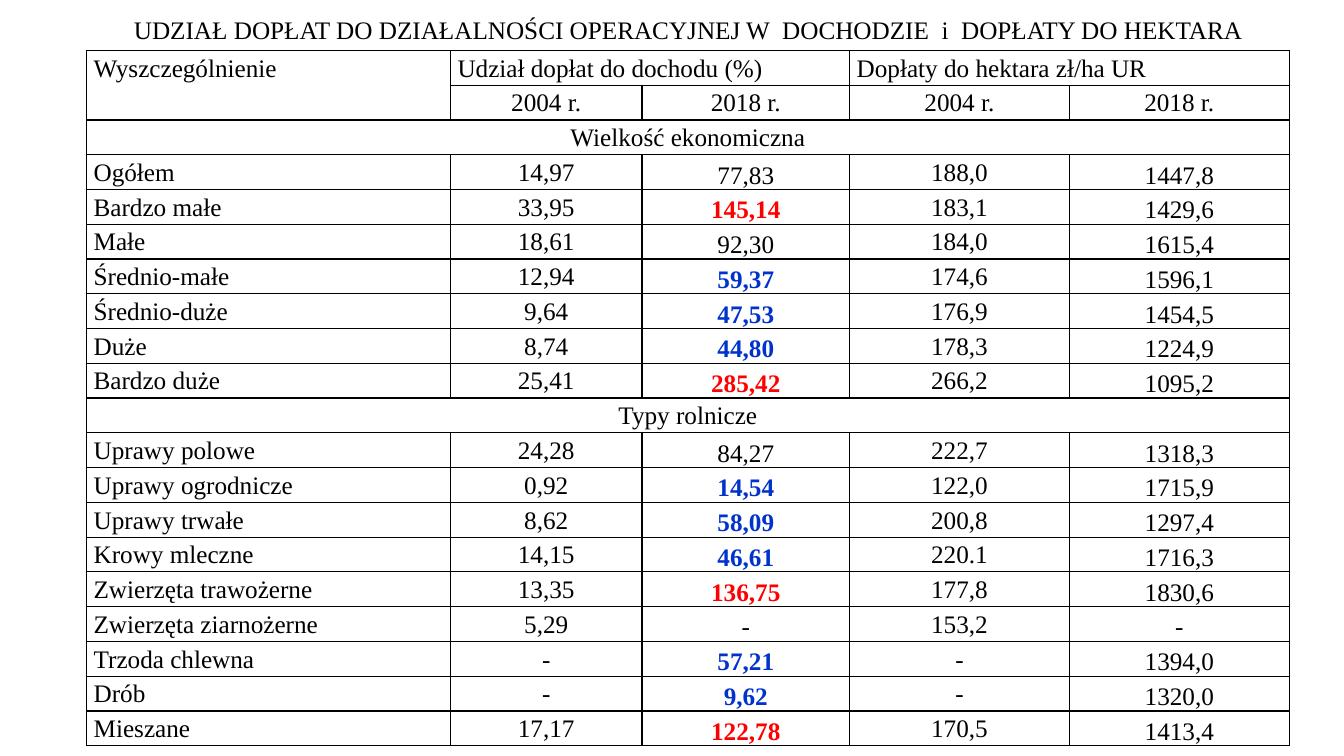
from dataclasses import dataclass
from typing import NamedTuple

from lxml import etree
from pptx import Presentation
from pptx import util as u
from pptx.dml.color import RGBColor
from pptx.enum import text
from pptx.oxml import ns


@dataclass(frozen=True)
class Theme:
    font: str = "Times New Roman"
    size: int = 18
    ink: str = "000000"
    high: str = "FF0000"
    low: str = "0033CC"
    line_spacing: float = 1.15
    space_after: int = 8
    border: int = 1


class Farm(NamedTuple):
    name: str
    share_2004: str
    share_2018: str
    rate_2004: str
    rate_2018: str


class Section(NamedTuple):
    heading: str
    farms: list[Farm]


THEME = Theme()
TITLE = "UDZIAŁ DOPŁAT DO DZIAŁALNOŚCI OPERACYJNEJ W  DOCHODZIE  i  DOPŁATY DO HEKTARA"
COLUMN_WIDTHS = [9.17, 4.83, 5.23, 5.54, 5.54]
TABLE_HEIGHT = 17.53
SHARE_2018_COLUMN = 2
SECTIONS = [
    Section("Wielkość ekonomiczna", [
        Farm("Ogółem", "14,97", "77,83", "188,0", "1447,8"),
        Farm("Bardzo małe", "33,95", "145,14", "183,1", "1429,6"),
        Farm("Małe", "18,61", "92,30", "184,0", "1615,4"),
        Farm("Średnio-małe", "12,94", "59,37", "174,6", "1596,1"),
        Farm("Średnio-duże", "9,64", "47,53", "176,9", "1454,5"),
        Farm("Duże", "8,74", "44,80", "178,3", "1224,9"),
        Farm("Bardzo duże", "25,41", "285,42", "266,2", "1095,2"),
    ]),
    Section("Typy rolnicze", [
        Farm("Uprawy polowe", "24,28", "84,27", "222,7", "1318,3"),
        Farm("Uprawy ogrodnicze", "0,92", "14,54", "122,0", "1715,9"),
        Farm("Uprawy trwałe", "8,62", "58,09", "200,8", "1297,4"),
        Farm("Krowy mleczne", "14,15", "46,61", "220.1", "1716,3"),
        Farm("Zwierzęta trawożerne", "13,35", "136,75", "177,8", "1830,6"),
        Farm("Zwierzęta ziarnożerne", "5,29", "-", "153,2", "-"),
        Farm("Trzoda chlewna", "-", "57,21", "-", "1394,0"),
        Farm("Drób", "-", "9,62", "-", "1320,0"),
        Farm("Mieszane", "17,17", "122,78", "170,5", "1413,4"),
    ]),
]


def write_text(frame, content: str, *, color: str = THEME.ink, bold: bool = False,
               centered: bool = False, line_spacing: float = 1.0,
               space_after: int = 0) -> None:
    paragraph = frame.paragraphs[0]
    paragraph.alignment = text.PP_ALIGN.CENTER if centered else text.PP_ALIGN.LEFT
    paragraph.line_spacing = line_spacing
    paragraph.space_before = u.Pt(0)
    paragraph.space_after = u.Pt(space_after)
    run = paragraph.add_run()
    run.text = content
    run.font.name = THEME.font
    run.font.size = u.Pt(THEME.size)
    run.font.bold = bold
    run.font.color.rgb = RGBColor.from_string(color)


def format_cell(cell) -> None:
    """Clear the fill, set the margins and rule all four sides."""
    cell.fill.background()
    cell.margin_left = cell.margin_right = u.Cm(0.18)
    cell.margin_top = cell.margin_bottom = 0
    properties = cell._tc.get_or_add_tcPr()
    for index, side in enumerate(("lnL", "lnR", "lnT", "lnB")):
        line = etree.Element(ns.qn(f"a:{side}"), w=str(u.Pt(THEME.border)))
        fill = etree.SubElement(line, ns.qn("a:solidFill"))
        etree.SubElement(fill, ns.qn("a:srgbClr"), val=THEME.ink)
        properties.insert(index, line)


def write_cell(cell, content: str, *, centered: bool = True, bottom: bool = False,
               color: str = THEME.ink) -> None:
    anchor = text.MSO_ANCHOR
    cell.vertical_anchor = anchor.BOTTOM if bottom else anchor.TOP
    write_text(cell.text_frame, content, color=color, bold=color != THEME.ink,
               centered=centered, line_spacing=THEME.line_spacing,
               space_after=THEME.space_after)


def share_color(share: str) -> str:
    """Red above 100 %, blue below 60 %, plain otherwise."""
    if share == "-":
        return THEME.ink
    value = float(share.replace(",", "."))
    return THEME.high if value > 100 else THEME.low if value < 60 else THEME.ink


def add_title(slide) -> None:
    title = slide.shapes.title
    title.left, title.top = u.Cm(3.12), u.Cm(0.23)
    title.width, title.height = u.Cm(29.16), u.Cm(1.02)
    frame = title.text_frame
    frame.auto_size = text.MSO_AUTO_SIZE.NONE
    frame.word_wrap = True
    frame.vertical_anchor = text.MSO_ANCHOR.TOP
    write_text(frame, TITLE)


def write_header(table) -> None:
    table.cell(0, 0).merge(table.cell(1, 0))
    write_cell(table.cell(0, 0), "Wyszczególnienie", centered=False)
    groups = {1: "Udział dopłat do dochodu (%)", 3: "Dopłaty do hektara zł/ha UR"}
    for column, group in groups.items():
        table.cell(0, column).merge(table.cell(0, column + 1))
        write_cell(table.cell(0, column), group, centered=False)
        for offset, year in enumerate(("2004 r.", "2018 r.")):
            write_cell(table.cell(1, column + offset), year)


def write_section(table, top: int, section: Section) -> None:
    table.cell(top, 0).merge(table.cell(top, len(COLUMN_WIDTHS) - 1))
    write_cell(table.cell(top, 0), section.heading)
    for row, farm in enumerate(section.farms, start=top + 1):
        for column, value in enumerate(farm):
            is_share = column == SHARE_2018_COLUMN
            write_cell(table.cell(row, column), value, centered=column > 0,
                       bottom=column in (2, 4),
                       color=share_color(value) if is_share else THEME.ink)


def add_subsidy_table(slide) -> None:
    row_count = 2 + sum(1 + len(section.farms) for section in SECTIONS)
    table = slide.shapes.add_table(
        row_count, len(COLUMN_WIDTHS), u.Cm(2.18), u.Cm(1.27),
        u.Cm(sum(COLUMN_WIDTHS)), u.Cm(TABLE_HEIGHT)).table
    table.first_row = table.horz_banding = False
    for column, width in zip(table.columns, COLUMN_WIDTHS):
        column.width = u.Cm(width)
    for row in table.rows:
        row.height = u.Cm(TABLE_HEIGHT / row_count)
    for cell in table.iter_cells():
        format_cell(cell)

    # Header, then each section below the one before
    write_header(table)
    top = 2
    for section in SECTIONS:
        write_section(table, top, section)
        top += 1 + len(section.farms)


def main() -> None:
    presentation = Presentation()
    presentation.slide_width, presentation.slide_height = u.Cm(33.87), u.Cm(19.05)
    title_only = presentation.slide_layouts.get_by_name("Title Only")
    slide = presentation.slides.add_slide(title_only)
    add_title(slide)
    add_subsidy_table(slide)
    presentation.save("out.pptx")


if __name__ == "__main__":
    main()
